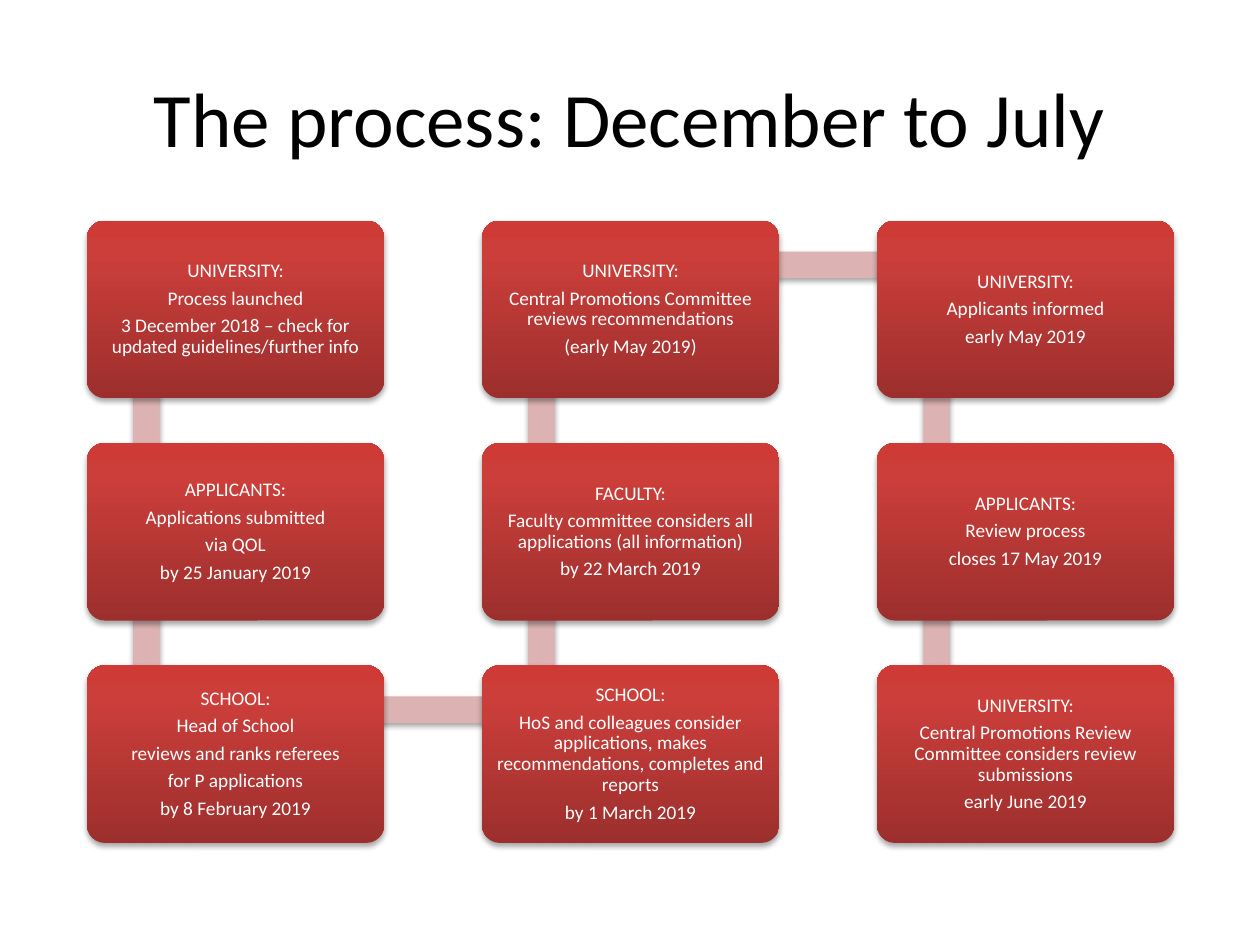
from copy import deepcopy
from dataclasses import dataclass
from itertools import pairwise
from math import atan2, degrees, hypot

from lxml.etree import SubElement
from pptx import Presentation
from pptx.dml.color import RGBColor as RGB
from pptx.enum.shapes import MSO_SHAPE as SHAPE
from pptx.enum.text import MSO_ANCHOR as ANCHOR, PP_ALIGN as ALIGN
from pptx.oxml.ns import qn
from pptx.util import Inches, Pt


@dataclass(frozen=True)
class Theme:
    font: str = "Calibri"
    title_size: float = 44
    card_size: float = 11
    title: str = "000000"
    card_text: str = "FFFFFF"
    bar: str = "DCB3B2"
    # Card gradient, from bottom to top
    card: tuple = ((0, "9C2F2D"), (0.8, "CB3E3A"), (1, "CE3B37"))
    shadow: str = "000000"


@dataclass(frozen=True)
class Grid:
    left: float = 0.69
    top: float = 1.75
    width: float = 8.63
    height: float = 4.94
    columns: int = 3
    rows: int = 3
    card_w: float = 2.36
    card_h: float = 1.41

    def corner(self, col, row):
        """Top left of a cell; the gaps share what the cards leave over."""
        return (self.left + col * (self.width - self.card_w) / (self.columns - 1),
                self.top + row * (self.height - self.card_h) / (self.rows - 1))

    def anchor(self, col, row):
        """Point in a card where the bars meet."""
        x, y = self.corner(col, row)
        return x + self.card_w / 5, y + self.card_h / 4


class ProcessSlide:
    BAR = 0.21

    def __init__(self, prs, theme, grid):
        self.s = prs.slides.add_slide(prs.slide_layouts[6])
        self.theme, self.grid = theme, grid

    def _write(self, tf, lines, size, color, inset=(0.1, 0.05), spacing=1, after=0):
        tf.word_wrap = True
        tf.vertical_anchor = ANCHOR.MIDDLE
        tf.margin_left = tf.margin_right = Inches(inset[0])
        tf.margin_top = tf.margin_bottom = Inches(inset[1])
        for i, line in enumerate(lines):
            p = tf.add_paragraph() if i else tf.paragraphs[0]
            p.alignment = ALIGN.CENTER
            p.line_spacing, p.space_after = spacing, Pt(after)
            r = p.add_run()
            r.text = line
            r.font.name, r.font.size = self.theme.font, Pt(size)
            r.font.color.rgb = RGB.from_string(color)

    def _shape(self, kind, x, y, w, h):
        """Borderless shape with a soft shadow below it."""
        sp = self.s.shapes.add_shape(kind, *map(Inches, (x, y, w, h)))
        sp.line.fill.background()
        sp.shadow.inherit = False
        effects = sp._element.spPr.find(qn("a:effectLst"))
        shadow = SubElement(effects, qn("a:outerShdw"), blurRad=str(Pt(3.1)),
                            dist=str(Pt(1.8)), dir="5400000", rotWithShape="0")
        color = SubElement(shadow, qn("a:srgbClr"), val=self.theme.shadow)
        SubElement(color, qn("a:alpha"), val="35000")
        return sp

    def title(self, text):
        tb = self.s.shapes.add_textbox(*map(Inches, (0.5, 0.3, 9, 1.25)))
        self._write(tb.text_frame, [text], self.theme.title_size, self.theme.title)

    def bar(self, start, end):
        """Bar from one cell's anchor to the next, turned to its direction."""
        (x1, y1), (x2, y2) = self.grid.anchor(*start), self.grid.anchor(*end)
        length = hypot(x2 - x1, y2 - y1)
        sp = self._shape(SHAPE.RECTANGLE, (x1 + x2 - length) / 2,
                         (y1 + y2 - self.BAR) / 2, length, self.BAR)
        sp.rotation = degrees(atan2(y2 - y1, x2 - x1)) % 360
        sp.fill.solid()
        sp.fill.fore_color.rgb = RGB.from_string(self.theme.bar)

    def card(self, cell, lines):
        g = self.grid
        sp = self._shape(SHAPE.ROUNDED_RECTANGLE, *g.corner(*cell), g.card_w, g.card_h)
        sp.adjustments[0] = 0.1
        sp.fill.gradient()
        sp.fill.gradient_angle = 90
        stops = sp._element.spPr.find(qn("a:gradFill")).find(qn("a:gsLst"))
        stops.append(deepcopy(stops[-1]))
        for stop, (position, color) in zip(sp.fill.gradient_stops, self.theme.card):
            stop.position = position
            stop.color.rgb = RGB.from_string(color)
        size = self.theme.card_size
        self._write(sp.text_frame, lines, size, self.theme.card_text,
                    inset=(0.05, 0.05), spacing=0.9, after=0.35 * size)


# Steps in order: (column, row) and the lines of the card
STEPS = [
    ((0, 0), ["UNIVERSITY:", "Process launched",
              "3 December 2018 – check for updated guidelines/further info"]),
    ((0, 1), ["APPLICANTS:", "Applications submitted", "via QOL",
              "by 25 January 2019"]),
    ((0, 2), ["SCHOOL:", "Head of School", "reviews and ranks referees",
              "for P applications", "by 8 February 2019"]),
    ((1, 2), ["SCHOOL:",
              "HoS and colleagues consider applications, makes "
              "recommendations, completes and reports",
              "by 1 March 2019"]),
    ((1, 1), ["FACULTY:",
              "Faculty committee considers all applications (all information)",
              "by 22 March 2019"]),
    ((1, 0), ["UNIVERSITY:",
              "Central Promotions Committee reviews recommendations",
              "(early May 2019)"]),
    ((2, 0), ["UNIVERSITY:", "Applicants informed", "early May 2019"]),
    ((2, 1), ["APPLICANTS:", "Review process", "closes 17 May 2019"]),
    ((2, 2), ["UNIVERSITY:",
              "Central Promotions Review Committee considers review submissions",
              "early June 2019"]),
]


def main():
    prs = Presentation()
    prs.slide_width, prs.slide_height = Inches(10), Inches(7.5)
    slide = ProcessSlide(prs, Theme(), Grid())

    # Heading
    slide.title("The process: December to July")

    # Bars lie behind the cards
    for (start, _), (end, _) in pairwise(STEPS):
        slide.bar(start, end)

    # Cards
    for cell, lines in STEPS:
        slide.card(cell, lines)

    prs.save("out.pptx")


if __name__ == "__main__":
    main()
